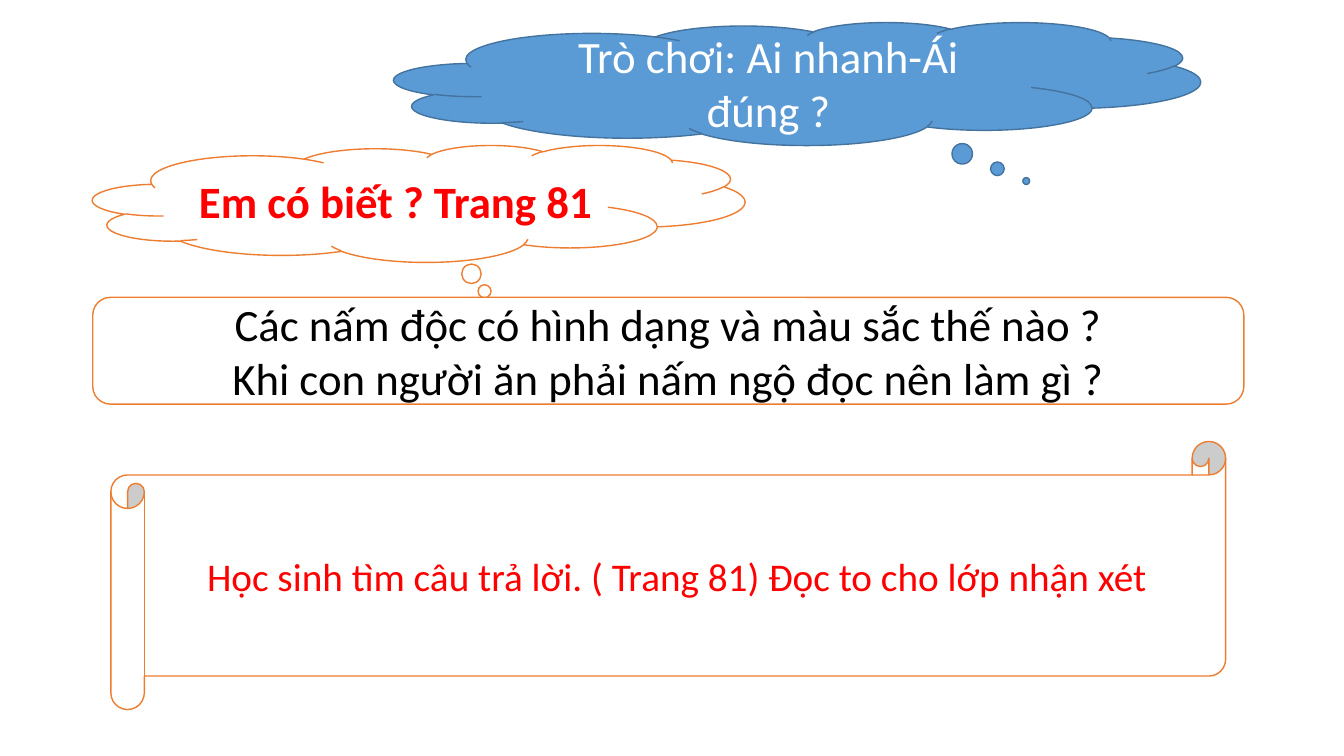
"""Build the quiz slide about poisonous mushrooms."""
from dataclasses import dataclass

import pptx
import pptx.dml.color
import pptx.enum.shapes
import pptx.enum.text
import pptx.util

Pt = pptx.util.Pt
RGBColor = pptx.dml.color.RGBColor
MSO_SHAPE = pptx.enum.shapes.MSO_SHAPE

WHITE = RGBColor(0xFF, 0xFF, 0xFF)
BLACK = RGBColor(0x00, 0x00, 0x00)
RED = RGBColor(0xFF, 0x00, 0x00)
ORANGE = RGBColor(0xED, 0x7D, 0x31)
BLUE = RGBColor(0x5B, 0x9B, 0xD5)
DARK_BLUE = RGBColor(0x43, 0x73, 0x9E)


@dataclass(frozen=True)
class Panel:
    preset: MSO_SHAPE
    box: tuple[float, float, float, float]
    text: str = ""
    size: float = 32
    color: RGBColor = RED
    bold: bool = False
    fill: RGBColor = WHITE
    outline: RGBColor = ORANGE
    tail: tuple[float, ...] = ()


PANELS = (
    Panel(MSO_SHAPE.CLOUD_CALLOUT, (66.24, 103.68, 465.84, 83.52),
          "Em có biết ? Trang 81", bold=True, tail=(0.115, 0.855)),
    Panel(MSO_SHAPE.FLOWCHART_ALTERNATE_PROCESS, (66.24, 212.4, 822.24, 76.32),
          "Các nấm độc có hình dạng và màu sắc thế nào ?\n"
          "Khi con người ăn phải nấm ngộ đọc nên làm gì ?", color=BLACK),
    Panel(MSO_SHAPE.HORIZONTAL_SCROLL, (79.2, 315.36, 796.32, 191.52),
          "Học sinh tìm câu trả lời. ( Trang 81) Đọc to cho lớp nhận xét", size=28),
    Panel(MSO_SHAPE.CLOUD_CALLOUT, (281.52, 15.84, 576, 87.84),
          fill=BLUE, outline=DARK_BLUE, tail=(0.284, 0.792)),
)


def write_text(frame: pptx.text.text.TextFrame, text: str, size: float,
               color: RGBColor, bold: bool = False) -> None:
    """Write centred text in one style."""
    frame.text = text
    frame.word_wrap = True
    frame.auto_size = pptx.enum.text.MSO_AUTO_SIZE.NONE
    frame.vertical_anchor = pptx.enum.text.MSO_ANCHOR.MIDDLE
    for paragraph in frame.paragraphs:
        paragraph.alignment = pptx.enum.text.PP_ALIGN.CENTER
        for run in paragraph.runs:
            run.font.name = "Calibri"
            run.font.size = Pt(size)
            run.font.bold = bold
            run.font.color.rgb = color


def draw_panel(slide: pptx.slide.Slide, panel: Panel) -> None:
    """Draw a filled, outlined panel with its text."""
    shape = slide.shapes.add_shape(panel.preset, *map(Pt, panel.box))
    shape.shadow.inherit = False
    shape.fill.solid()
    shape.fill.fore_color.rgb = panel.fill
    shape.line.color.rgb = panel.outline
    shape.line.width = Pt(1)
    for index, offset in enumerate(panel.tail):
        shape.adjustments[index] = offset
    if panel.text:
        write_text(shape.text_frame, panel.text, panel.size, panel.color, panel.bold)


def place_title(slide: pptx.slide.Slide) -> None:
    """Set the title over the blue cloud."""
    game = slide.shapes.title
    game.left, game.top, game.width, game.height = map(Pt, (379, 29, 340, 60))
    write_text(game.text_frame, "Trò chơi: Ai nhanh-Ái đúng ?", 32, WHITE)
    slide.shapes.element.append(game.element)


def main() -> None:
    """Assemble and save the slide."""
    lesson = pptx.Presentation()
    lesson.slide_width, lesson.slide_height = Pt(960), Pt(540)
    quiz = lesson.slides.add_slide(lesson.slide_layouts[5])
    for panel in PANELS:
        draw_panel(quiz, panel)
    place_title(quiz)
    lesson.save("out.pptx")


if __name__ == "__main__":
    main()
